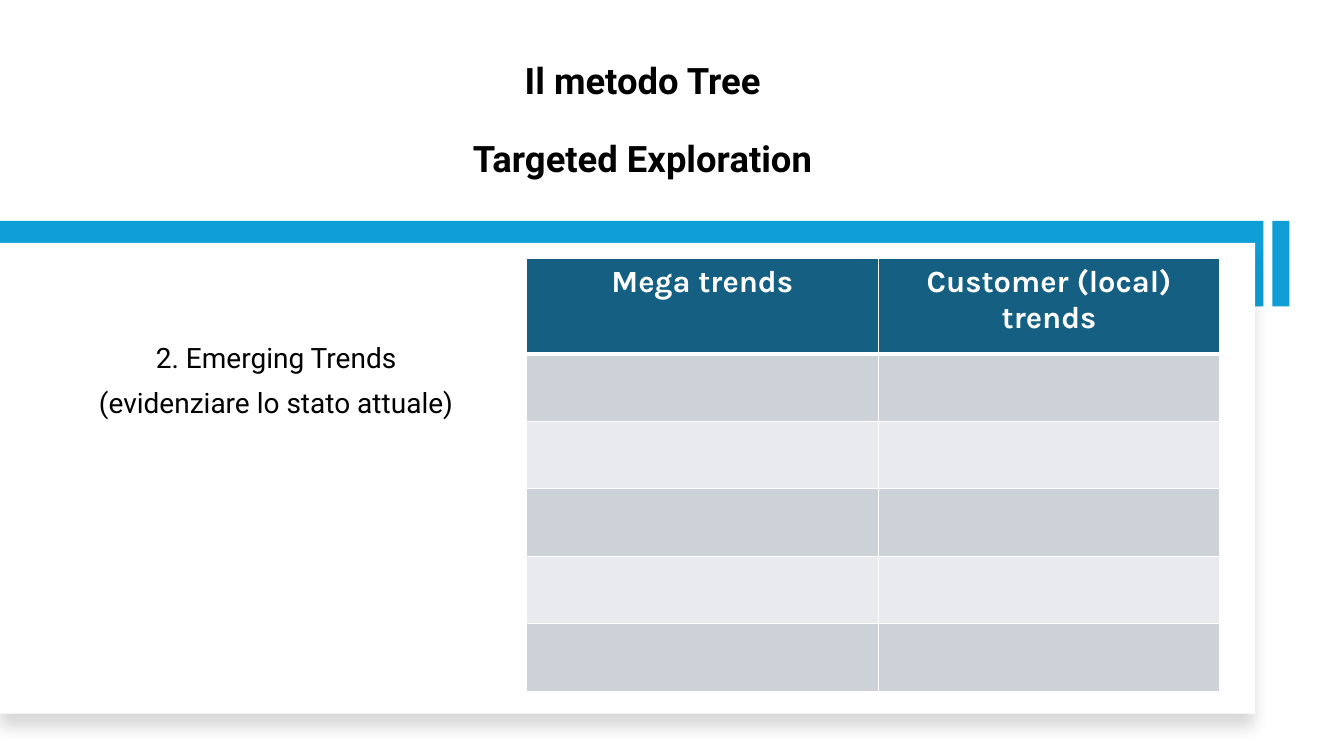
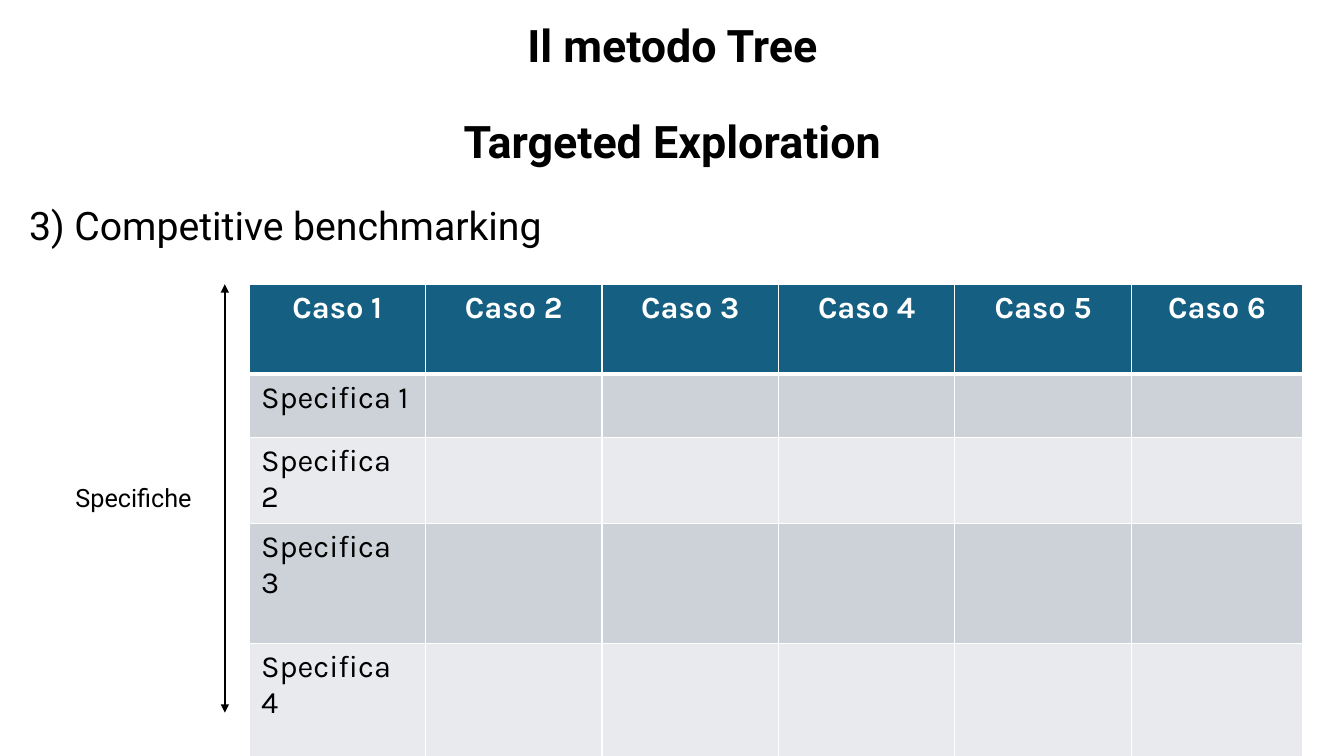
from lxml.etree import SubElement
from pptx import Presentation
from pptx.dml.color import RGBColor
from pptx.enum.shapes import MSO_CONNECTOR, MSO_SHAPE
from pptx.enum.text import MSO_ANCHOR, MSO_AUTO_SIZE, PP_ALIGN
from pptx.oxml.ns import qn
from pptx.util import Inches, Pt

BLACK = RGBColor(0x00, 0x00, 0x00)
WHITE = RGBColor(0xFF, 0xFF, 0xFF)
BRIGHT_BLUE = RGBColor(0x0F, 0x9E, 0xD5)
HEADER_BLUE = RGBColor(0x15, 0x60, 0x82)
DARK_BAND = RGBColor(0xCC, 0xD2, 0xD8)
LIGHT_BAND = RGBColor(0xE8, 0xEA, 0xED)

TEXT_FONT = "Roboto"
TABLE_FONT = "Karla"
TITLE_LINES = ["Il metodo Tree", "Targeted Exploration"]


def write_text(frame, lines, size, font=TEXT_FONT, color=BLACK, bold=False,
               align=PP_ALIGN.LEFT, anchor=MSO_ANCHOR.TOP, line_spacing=1.0,
               space_before=0):
    frame.word_wrap = True
    frame.vertical_anchor = anchor
    for index, line in enumerate(lines):
        para = frame.paragraphs[0] if index == 0 else frame.add_paragraph()
        para.alignment = align
        para.line_spacing = line_spacing
        para.space_before = Pt(space_before if index else 0)
        span = para.add_run()
        span.text = line
        span.font.name = font
        span.font.size = Pt(size)
        span.font.bold = bold
        span.font.color.rgb = color


def add_text(page, left, top, width, height, lines, **style):
    box = page.shapes.add_textbox(Inches(left), Inches(top), Inches(width), Inches(height))
    write_text(box.text_frame, lines, **style)
    return box


def add_titled_page(deck, left, top, width, height, size, anchor):
    page = deck.slides.add_slide(deck.slide_layouts[5])
    title = page.shapes.title
    title.left, title.top = Inches(left), Inches(top)
    title.width, title.height = Inches(width), Inches(height)
    title.text_frame.auto_size = MSO_AUTO_SIZE.NONE
    write_text(title.text_frame, TITLE_LINES, size=size, bold=True,
               align=PP_ALIGN.CENTER, anchor=anchor, line_spacing=0.9,
               space_before=round(size * 1.06))
    return page


def add_block(page, left, top, width, height, color):
    block = page.shapes.add_shape(MSO_SHAPE.RECTANGLE, Inches(left), Inches(top),
                                  Inches(width), Inches(height))
    block.shadow.inherit = False
    block.fill.solid()
    block.fill.fore_color.rgb = color
    block.line.fill.background()
    return block


def add_soft_shadow(block):
    effects = block._element.spPr.find(qn("a:effectLst"))
    shadow = SubElement(effects, qn("a:outerShdw"), blurRad=str(Pt(11)), dist=str(Pt(10)),
                        dir="5400000", algn="t", rotWithShape="0")
    color = SubElement(shadow, qn("a:srgbClr"), val=str(BLACK))
    SubElement(color, qn("a:alpha"), val="15000")


def add_panel(page, left, top):
    add_block(page, left, top, 12.53, 0.85, BRIGHT_BLUE)
    add_soft_shadow(add_block(page, left, top + 0.22, 12.45, 4.67, WHITE))
    add_block(page, left + 12.62, top, 0.17, 0.85, BRIGHT_BLUE)


def set_borders(cell, bottom):
    properties = cell._tc.get_or_add_tcPr()
    for side, width in (("L", 1), ("R", 1), ("T", 1), ("B", bottom)):
        line = SubElement(properties, qn(f"a:ln{side}"), w=str(Pt(width)))
        fill = SubElement(line, qn("a:solidFill"))
        SubElement(fill, qn("a:srgbClr"), val=str(WHITE))


def format_cell(cell, text, row):
    is_header = row == 0
    set_borders(cell, 3 if is_header else 1)
    cell.fill.solid()
    cell.fill.fore_color.rgb = (
        HEADER_BLUE if is_header else DARK_BAND if row % 2 else LIGHT_BAND)
    cell.margin_left = cell.margin_right = Inches(0.12)
    cell.margin_top = cell.margin_bottom = Inches(0.06)
    if text:
        write_text(cell.text_frame, [text], size=22, font=TABLE_FONT, bold=is_header,
                   color=WHITE if is_header else BLACK,
                   align=PP_ALIGN.CENTER if is_header else PP_ALIGN.LEFT)


def add_trend_table(page, left, top, widths, heights, headers, labels=()):
    table = page.shapes.add_table(len(heights), len(widths), Inches(left), Inches(top),
                                  Inches(sum(widths)), Inches(sum(heights))).table
    table.horz_banding = False
    for column, width in zip(table.columns, widths):
        column.width = Inches(width)
    for row, height in zip(table.rows, heights):
        row.height = Inches(height)
    texts = {(0, column): header for column, header in enumerate(headers)}
    texts.update({(row, 0): label for row, label in enumerate(labels, 1)})
    for row in range(len(heights)):
        for column in range(len(widths)):
            format_cell(table.cell(row, column), texts.get((row, column)), row)


def add_double_arrow(page, left, top, height):
    arrow = page.shapes.add_connector(MSO_CONNECTOR.STRAIGHT, Inches(left), Inches(top),
                                      Inches(left), Inches(top + height))
    arrow.line.color.rgb = BLACK
    arrow.line.width = Pt(1.5)
    line = arrow.line._get_or_add_ln()
    for end in ("headEnd", "tailEnd"):
        SubElement(line, qn(f"a:{end}"), type="triangle")
    SubElement(arrow._element.spPr, qn("a:effectLst"))


def build_trends_page(deck):
    page = add_titled_page(deck, 0.87, 0.42, 11.01, 1.42, 26, MSO_ANCHOR.BOTTOM)
    add_panel(page, 0, 2.19)
    add_text(page, 0.26, 2.19, 4.96, 3.2,
             ["2. Emerging Trends", "(evidenziare lo stato attuale)"], size=20,
             align=PP_ALIGN.CENTER, anchor=MSO_ANCHOR.MIDDLE, line_spacing=0.9,
             space_before=10)
    add_trend_table(page, 5.22, 2.56, [3.49, 3.39], [0.95] + [0.67] * 5,
                    ["Mega trends", "Customer (local) trends"])


def build_benchmarking_page(deck):
    page = add_titled_page(deck, 0.92, 0.23, 11.5, 1.45, 32, MSO_ANCHOR.MIDDLE)
    add_text(page, 0.19, 2, 12.22, 0.6, ["3) Competitive benchmarking"], size=28,
             line_spacing=0.9)
    table_top = 2.82
    add_trend_table(page, 2.47, table_top, [1.75] * 5 + [1.7],
                    [0.89, 0.63, 0.83, 1.19, 1.14],
                    [f"Caso {number}" for number in range(1, 7)],
                    [f"Specifica {number}" for number in range(1, 5)])
    add_text(page, 0.65, 4.74, 1.45, 0.4, ["Specifiche"], size=18)
    add_double_arrow(page, 2.23, table_top, 4.25)


def main():
    deck = Presentation()
    deck.slide_width, deck.slide_height = Inches(13.33), Inches(7.5)
    build_trends_page(deck)
    build_benchmarking_page(deck)
    deck.save("out.pptx")


if __name__ == "__main__":
    main()
